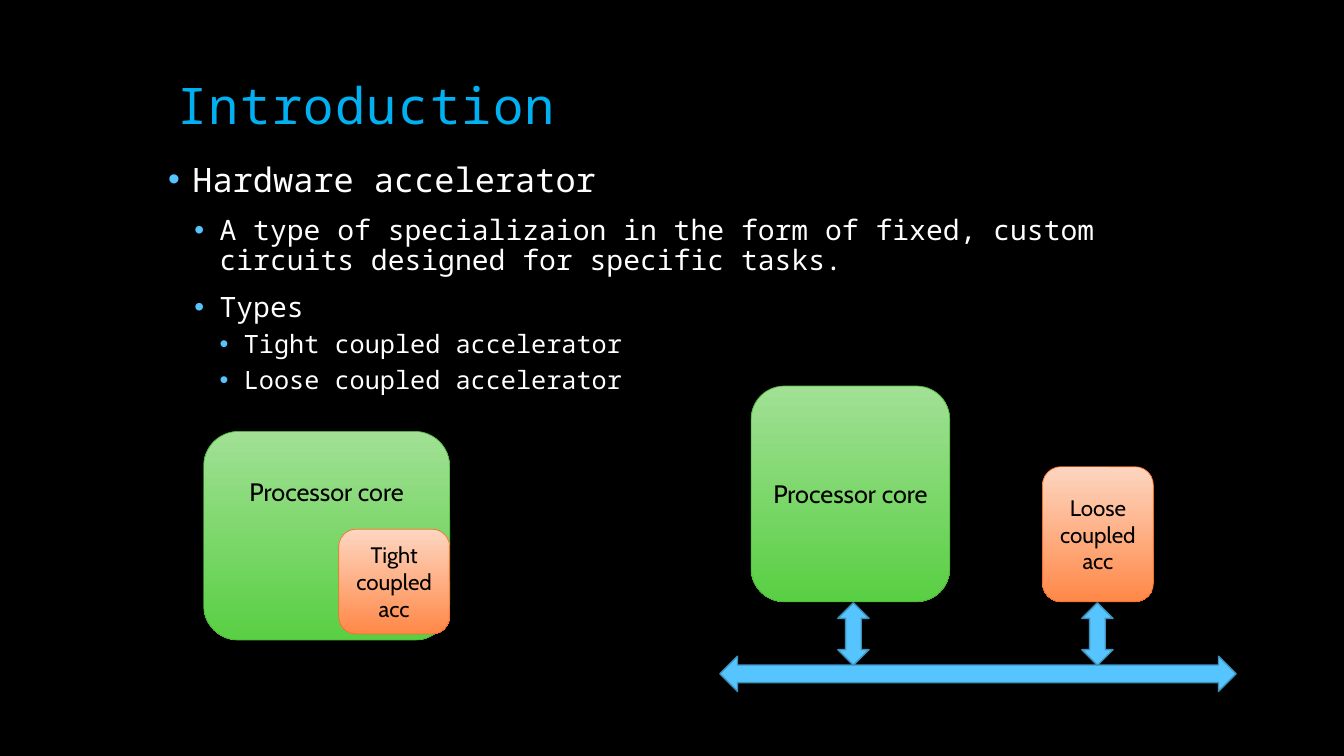
from lxml import etree
from pptx import Presentation
from pptx.dml.color import RGBColor
from pptx.enum.shapes import MSO_SHAPE
from pptx.enum.text import MSO_ANCHOR, PP_ALIGN
from pptx.oxml.ns import qn
from pptx.util import Inches, Pt

ROUNDED = MSO_SHAPE.ROUNDED_RECTANGLE
HORIZONTAL_ARROW = MSO_SHAPE.LEFT_RIGHT_ARROW
VERTICAL_ARROW = MSO_SHAPE.UP_DOWN_ARROW
TOP, MIDDLE, BOTTOM = MSO_ANCHOR.TOP, MSO_ANCHOR.MIDDLE, MSO_ANCHOR.BOTTOM
LEFT, CENTER = PP_ALIGN.LEFT, PP_ALIGN.CENTER

BLACK = RGBColor(0x00, 0x00, 0x00)
WHITE = RGBColor(0xFF, 0xFF, 0xFF)
TITLE_BLUE = RGBColor(0x00, 0xB0, 0xF0)
SKY_BLUE = RGBColor(0x56, 0xC5, 0xFF)
ARROW_EDGE = RGBColor(0x40, 0x92, 0xBD)
GREEN_LIGHT = RGBColor(0xA1, 0xE0, 0x95)
GREEN_DARK = RGBColor(0x59, 0xCF, 0x43)
GREEN_EDGE = RGBColor(0x4B, 0xB8, 0x36)
ORANGE_LIGHT = RGBColor(0xFD, 0xD6, 0xC1)
ORANGE_DARK = RGBColor(0xFF, 0x88, 0x48)
ORANGE_EDGE = RGBColor(0xF8, 0x6E, 0x24)

MONO, SANS = "Noto Sans Mono", "Cabin"
LEVELS = [
    {"size": 24, "margin": 0.24, "hanging": 0.24, "before": 18},
    {"size": 20, "margin": 0.51, "hanging": 0.25, "before": 12},
    {"size": 18, "margin": 0.75, "hanging": 0.24, "before": 6},
]
OUTLINE = [
    (0, "Hardware accelerator"),
    (1, "A type of specializaion in the form of fixed, custom circuits designed for specific tasks."),
    (1, "Types"),
    (2, "Tight coupled accelerator"),
    (2, "Loose coupled accelerator"),
]


def write_text(paragraph, text, *, size, font, color, align=LEFT, line_spacing=1.0, tracking=0):
    paragraph.alignment = align
    paragraph.line_spacing = line_spacing
    run = paragraph.add_run()
    run.text = text
    run.font.size = Pt(size)
    run.font.name = font
    run.font.color.rgb = color
    if tracking:
        run.font._element.set("spc", str(tracking * 100))


def add_bullet(paragraph, margin, hanging):
    properties = paragraph._p.get_or_add_pPr()
    properties.set("marL", str(Inches(margin)))
    properties.set("indent", str(-Inches(hanging)))
    bullet_color = etree.SubElement(properties, qn("a:buClr"))
    etree.SubElement(bullet_color, qn("a:srgbClr")).set("val", str(SKY_BLUE))
    etree.SubElement(properties, qn("a:buFont")).set("typeface", "Arial")
    etree.SubElement(properties, qn("a:buChar")).set("char", "•")


def add_text_frame(slide, left, top, width, height, anchor):
    box = slide.shapes.add_textbox(Inches(left), Inches(top), Inches(width), Inches(height))
    frame = box.text_frame
    frame.word_wrap = True
    frame.vertical_anchor = anchor
    return frame


def add_title(slide, text):
    frame = add_text_frame(slide, 1.66, 0.42, 10, 0.97, BOTTOM)
    write_text(frame.paragraphs[0], text, size=36, font=MONO, color=TITLE_BLUE,
               line_spacing=0.9, tracking=1)


def add_outline(slide, items):
    frame = add_text_frame(slide, 1.57, 1.57, 9.84, 5.4, TOP)
    for index, (depth, text) in enumerate(items):
        level = LEVELS[depth]
        paragraph = frame.add_paragraph() if index else frame.paragraphs[0]
        paragraph.level = depth
        add_bullet(paragraph, level["margin"], level["hanging"])
        if index:
            paragraph.space_before = Pt(level["before"])
        write_text(paragraph, text, size=level["size"], font=MONO, color=WHITE, line_spacing=0.9)


def add_figure(slide, kind, left, top, width, height, edge, edge_width):
    shape = slide.shapes.add_shape(kind, Inches(left), Inches(top), Inches(width), Inches(height))
    shape.shadow.inherit = False
    shape.line.color.rgb = edge
    shape.line.width = Pt(edge_width)
    return shape


def add_block(slide, lines, left, top, width, height, *, light, dark, edge, size, bottom_inset=0.05):
    shape = add_figure(slide, ROUNDED, left, top, width, height, edge, 0.5)
    shape.fill.gradient()
    shape.fill.gradient_angle = 270
    for stop, color in zip(shape.fill.gradient_stops, (light, dark)):
        stop.color.rgb = color
    frame = shape.text_frame
    frame.word_wrap = True
    frame.vertical_anchor = MIDDLE
    frame.margin_bottom = Inches(bottom_inset)
    for index, text in enumerate(lines):
        paragraph = frame.add_paragraph() if index else frame.paragraphs[0]
        write_text(paragraph, text, size=size, font=SANS, color=BLACK, align=CENTER)


def add_core(slide, left, top, width, height, bottom_inset=0.05):
    add_block(slide, ["Processor core"], left, top, width, height, light=GREEN_LIGHT,
              dark=GREEN_DARK, edge=GREEN_EDGE, size=18, bottom_inset=bottom_inset)


def add_accelerator(slide, coupling, left, top, height):
    add_block(slide, [f"{coupling} coupled", "acc"], left, top, 1.1, height, light=ORANGE_LIGHT,
              dark=ORANGE_DARK, edge=ORANGE_EDGE, size=16)


def add_arrow(slide, kind, left, top, width, height):
    arrow = add_figure(slide, kind, left, top, width, height, ARROW_EDGE, 1)
    arrow.fill.solid()
    arrow.fill.fore_color.rgb = SKY_BLUE


def main():
    presentation = Presentation()
    presentation.slide_width = Inches(13.33)
    presentation.slide_height = Inches(7.5)
    slide = presentation.slides.add_slide(presentation.slide_layouts[6])
    slide.background.fill.solid()
    slide.background.fill.fore_color.rgb = BLACK

    add_title(slide, "Introduction")
    add_outline(slide, OUTLINE)

    add_core(slide, 2.02, 4.28, 2.44, 2.07, bottom_inset=0.92)
    add_accelerator(slide, "Tight", 3.36, 5.25, 1.04)

    add_core(slide, 7.45, 3.83, 1.97, 2.14)
    add_accelerator(slide, "Loose", 10.34, 4.63, 1.34)
    add_arrow(slide, HORIZONTAL_ARROW, 7.14, 6.51, 5.12, 0.35)
    for left in (8.31, 10.73):
        add_arrow(slide, VERTICAL_ARROW, left, 5.98, 0.31, 0.62)

    presentation.save("out.pptx")


if __name__ == "__main__":
    main()
